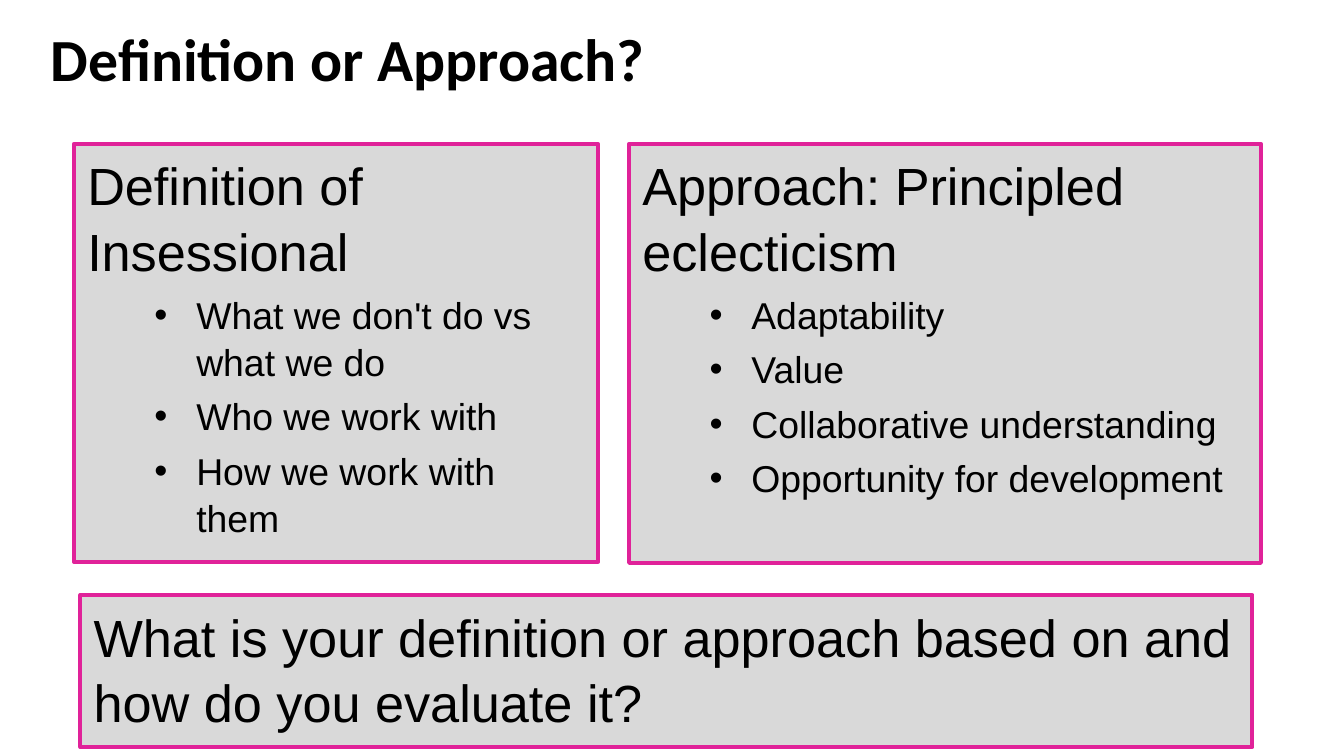
from dataclasses import dataclass
from lxml import etree
from pptx import Presentation
from pptx.dml.color import RGBColor
from pptx.enum.shapes import MSO_SHAPE
from pptx.enum.text import MSO_ANCHOR, PP_ALIGN
from pptx.oxml.ns import qn
from pptx.util import Cm, Pt

RECT = MSO_SHAPE.RECTANGLE
TOP = MSO_ANCHOR.TOP
LEFT = PP_ALIGN.LEFT


@dataclass(frozen=True)
class Theme:
    ink: RGBColor = RGBColor(0, 0, 0)
    fill: RGBColor = RGBColor(0xD9, 0xD9, 0xD9)
    edge: RGBColor = RGBColor(0xE0, 0x22, 0x99)
    body: str = "Arial"
    head: str = "Calibri"
    title: int = 32
    lead: int = 28
    item: int = 20


@dataclass(frozen=True)
class Panel:
    left: float
    top: float
    width: float
    height: float
    lead: str
    items: tuple[str, ...] = ()


THEME = Theme()
PANELS = (
    Panel(1.4, 2.72, 9.9, 7.9, "Definition of Insessional",
          ("What we don't do vs what we do", "Who we work with",
           "How we work with them")),
    Panel(11.89, 2.72, 11.94, 7.92, "Approach: Principled eclecticism",
          ("Adaptability", "Value", "Collaborative understanding",
           "Opportunity for development")),
    Panel(1.52, 11.25, 22.15, 2.87,
          "What is your definition or approach based on "
          "and how do you evaluate it?"),
)


def apply(target, values: dict) -> None:
    for name, value in values.items():
        setattr(target, name, value)


def style(para, face: str, size: int, bold: bool = False) -> None:
    apply(para.font, {"name": face, "size": Pt(size), "bold": bold})
    para.font.color.rgb = THEME.ink


def bullet(para) -> None:
    props = para._p.get_or_add_pPr()
    props.set("marL", str(Cm(2.06)))
    props.set("indent", str(Cm(-0.79)))
    etree.SubElement(props, qn("a:buFont")).set("typeface", THEME.body)
    etree.SubElement(props, qn("a:buChar")).set("char", "•")


def draw_title(slide, text: str) -> None:
    box = slide.shapes.add_textbox(Cm(0.71), Cm(0.28), Cm(19.4), Cm(2.77))
    apply(box.text_frame, {"word_wrap": True, "vertical_anchor": TOP})
    para = box.text_frame.paragraphs[0]
    para.text = text
    style(para, THEME.head, THEME.title, True)


def draw_panel(slide, panel: Panel) -> None:
    box = slide.shapes.add_shape(RECT, Cm(panel.left), Cm(panel.top),
                                 Cm(panel.width), Cm(panel.height))
    box.shadow.inherit = False
    box.fill.solid()
    box.fill.fore_color.rgb = THEME.fill
    box.line.color.rgb = THEME.edge
    box.line.width = Pt(2.25)
    frame = box.text_frame
    apply(frame, {"word_wrap": True, "vertical_anchor": TOP})
    lead = frame.paragraphs[0]
    apply(lead, {"text": panel.lead, "alignment": LEFT, "line_spacing": 1.05})
    style(lead, THEME.body, THEME.lead)
    for text in panel.items:
        para = frame.add_paragraph()
        bullet(para)
        apply(para, {"text": text, "level": 1, "alignment": LEFT,
                     "line_spacing": 1.05, "space_before": Pt(4)})
        style(para, THEME.body, THEME.item)


def main() -> None:
    deck = Presentation()
    apply(deck, {"slide_width": Cm(25.4), "slide_height": Cm(14.29)})
    slide = deck.slides.add_slide(deck.slide_layouts[6])
    draw_title(slide, "Definition or Approach?")
    for panel in PANELS:
        draw_panel(slide, panel)
    deck.save("out.pptx")


if __name__ == "__main__":
    main()
